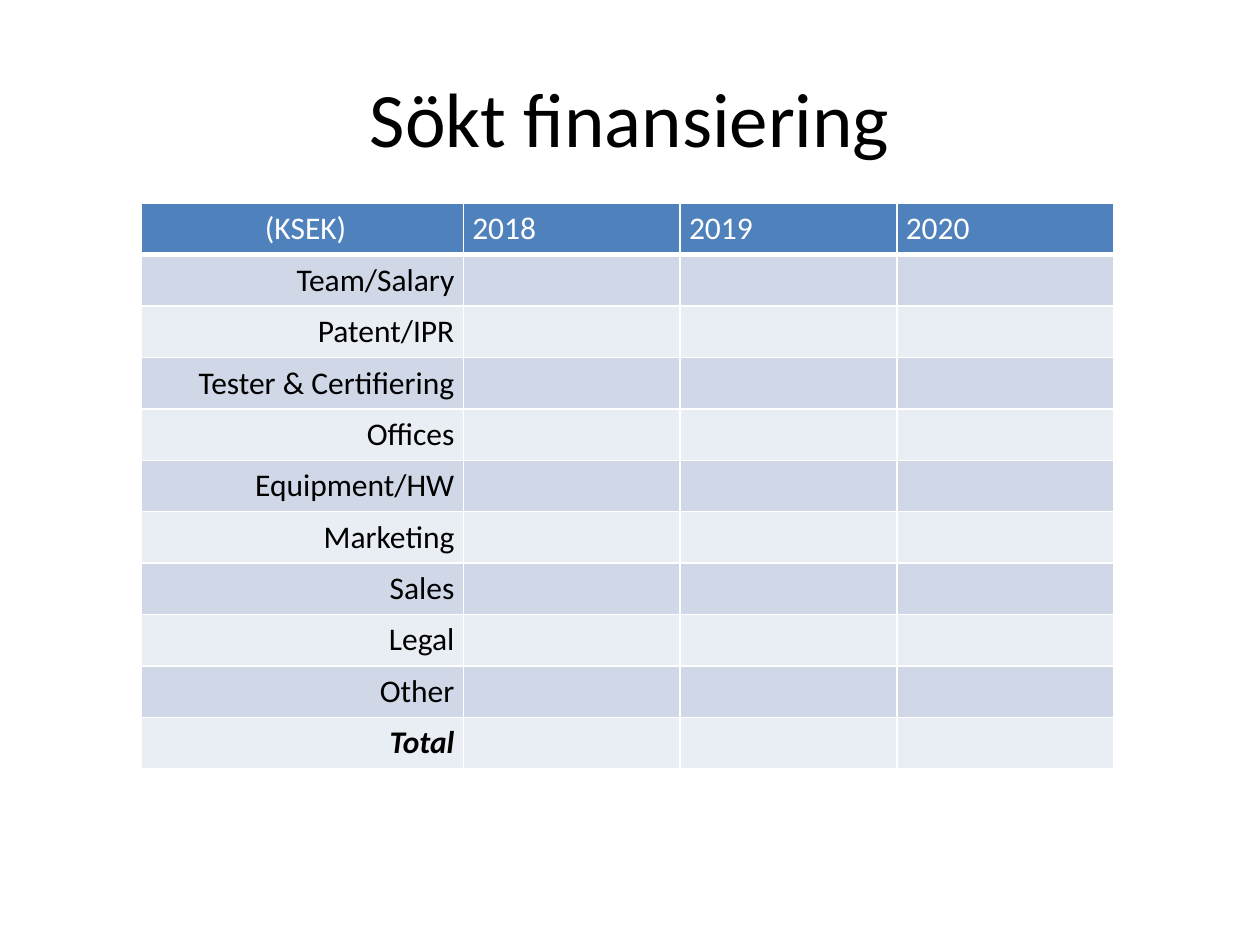
from lxml import etree
from pptx import Presentation
from pptx.dml.color import RGBColor
from pptx.enum import text
from pptx.oxml.ns import qn
from pptx.util import Cm, Pt

FONT = "Calibri"
BLACK, WHITE = "000000", "FFFFFF"
HEADER_FILL = "4F81BD"
BAND_FILLS = ("D0D8E8", "E9EDF4")
LEFT, CENTER, RIGHT = (text.PP_ALIGN.LEFT, text.PP_ALIGN.CENTER,
                       text.PP_ALIGN.RIGHT)

YEARS = ["2018", "2019", "2020"]
COSTS = ["Team/Salary", "Patent/IPR", "Tester & Certifiering", "Offices",
         "Equipment/HW", "Marketing", "Sales", "Legal", "Other", "Total"]
LABEL_WIDTH, YEAR_WIDTH, ROW_HEIGHT = Cm(6.5), Cm(4.37), Cm(1.03)


def color(hex_value):
    return RGBColor.from_string(hex_value)


def write(frame, words, align, hex_value, **font_format):
    """Put one formatted paragraph in a text frame."""
    paragraph = frame.paragraphs[0]
    paragraph.alignment = align
    run = paragraph.add_run()
    run.text = words
    run.font.color.rgb = color(hex_value)
    for name, value in {"name": FONT, **font_format}.items():
        setattr(run.font, name, value)


def add_title(slide, words):
    title = slide.shapes.add_textbox(Cm(1.27), Cm(0.76), Cm(22.86), Cm(3.18))
    title.text_frame.word_wrap = True
    title.text_frame.vertical_anchor = text.MSO_ANCHOR.MIDDLE
    write(title.text_frame, words, CENTER, BLACK, size=Pt(44))


def style_cell(cell, fill, bottom_width=1):
    """Set margins, white borders and fill of one cell."""
    margins = {"margin_left": Cm(0.18), "margin_right": Cm(0.18),
               "margin_top": Cm(0.13), "margin_bottom": Cm(0.13)}
    for name, value in margins.items():
        setattr(cell, name, value)
    # Borders come before the fill in the cell properties
    properties = cell._tc.get_or_add_tcPr()
    for side, width in {"L": 1, "R": 1, "T": 1, "B": bottom_width}.items():
        line = etree.SubElement(properties, qn(f"a:ln{side}"), w=str(Pt(width)))
        solid = etree.SubElement(line, qn("a:solidFill"))
        etree.SubElement(solid, qn("a:srgbClr"), val=WHITE)
    cell.fill.solid()
    cell.fill.fore_color.rgb = color(fill)


def add_budget(slide):
    widths = [LABEL_WIDTH] + [YEAR_WIDTH] * len(YEARS)
    row_count = len(COSTS) + 1
    budget = slide.shapes.add_table(
        row_count, len(widths), Cm(2.84), Cm(4.1),
        sum(widths), ROW_HEIGHT * row_count).table
    for column, width in zip(budget.columns, widths):
        column.width = width
    for row in budget.rows:
        row.height = ROW_HEIGHT

    # Header row
    for index, heading in enumerate([" (KSEK)"] + YEARS):
        cell = budget.cell(0, index)
        style_cell(cell, HEADER_FILL, bottom_width=3)
        write(cell.text_frame, heading, LEFT if index else CENTER, WHITE,
              size=Pt(18))

    # Banded cost rows, with the year columns left open
    for index, cost in enumerate(COSTS):
        for cell in budget.rows[index + 1].cells:
            style_cell(cell, BAND_FILLS[index % 2])
        is_total = cost == "Total"
        write(budget.cell(index + 1, 0).text_frame, cost, RIGHT, BLACK,
              size=Pt(18), bold=is_total, italic=is_total)


def main():
    deck = Presentation()
    deck.slide_width, deck.slide_height = Cm(25.4), Cm(19.05)
    slide = deck.slides.add_slide(deck.slide_layouts[6])
    add_budget(slide)
    add_title(slide, "Sökt finansiering")
    deck.save("out.pptx")


if __name__ == "__main__":
    main()
